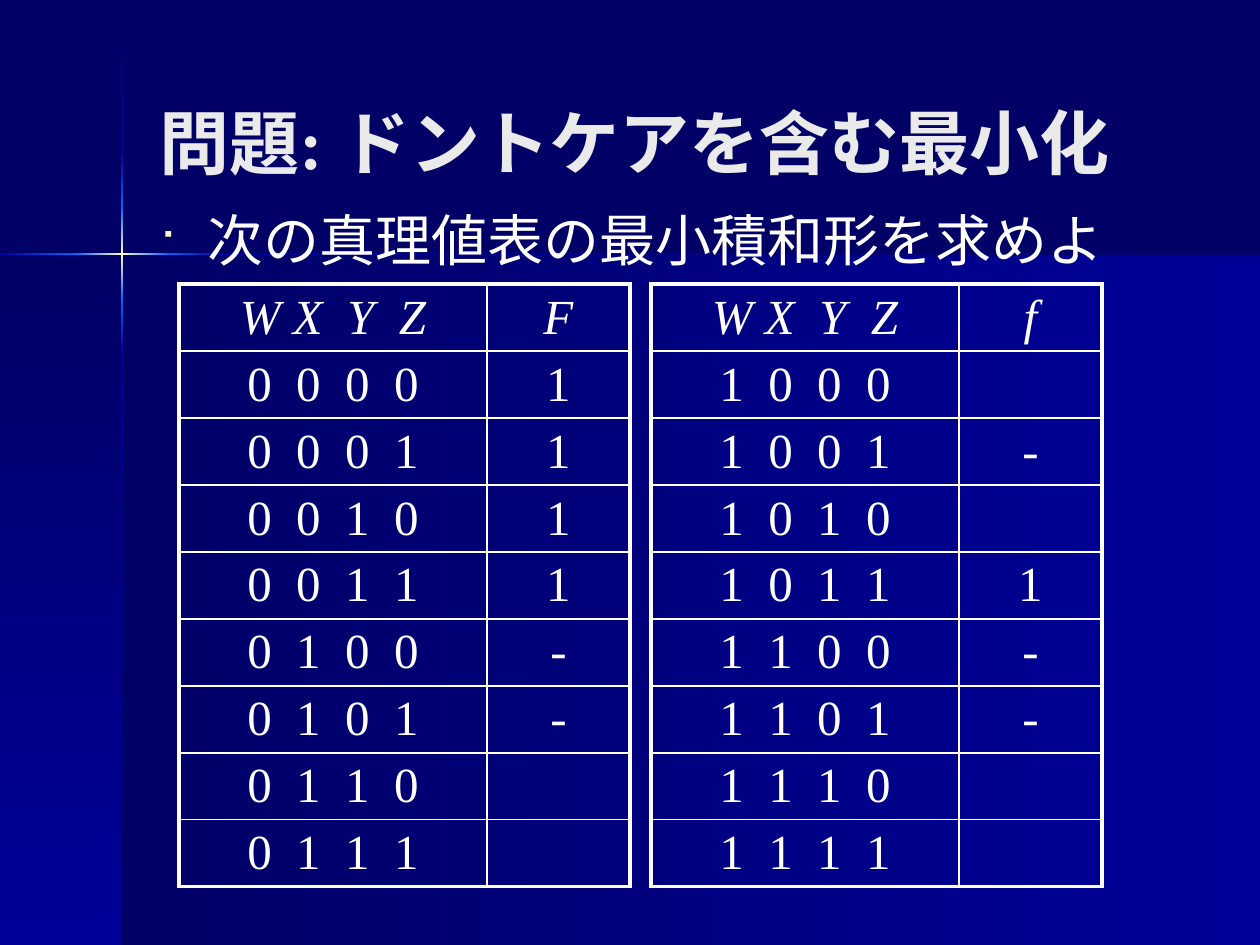
"""Build a slide with a don't-care minimisation exercise and its truth table."""
from lxml import etree
from pptx import Presentation
from pptx.dml.color import RGBColor
from pptx.enum.shapes import MSO_SHAPE
from pptx.enum.text import MSO_ANCHOR, PP_ALIGN
from pptx.oxml import parse_xml
from pptx.oxml.ns import nsdecls, qn
from pptx.util import Pt

RECTANGLE = MSO_SHAPE.RECTANGLE
MIDDLE = MSO_ANCHOR.MIDDLE
LEFT, CENTER = PP_ALIGN.LEFT, PP_ALIGN.CENTER

PX = 914400 // 126
FONT = "Times New Roman"
COLORS = {"night": "000066", "navy": "000099", "blue": "0066FF",
          "cream": "FFFFCC", "white": "FFFFFF", "title": "EAEAEA"}

TITLE = "問題: ドントケアを含む最小化"
TASK = "次の真理値表の最小積和形を求めよ"
INPUTS = "W X  Y  Z"
TRUTH_TABLES = [
    {"left": 179, "output": "F", "first": 0, "values": ["1", "1", "1", "1", "-", "-", "", ""]},
    {"left": 651, "output": "f", "first": 8, "values": ["", "-", "", "1", "-", "-", "", ""]},
]
TABLE_TOP, ROW_HEIGHT, COLUMN_WIDTHS = 284, 67, (308, 143)
THICK, THIN = 2.25, 1

DOWN, ACROSS = 90, 0
FADE_IN, FADE_OUT = ("night", "navy"), ("navy", "night")
GLOW_IN, GLOW_OUT = ("navy", "blue"), ("blue", "navy")
FLARE = ("blue", "cream", "blue")
BACKDROP = [
    ((122, 255, 1138, 690), FADE_IN, ACROSS),
    ((0, 255, 122, 690), FADE_IN, DOWN),
    ((121, 1, 2, 152), FADE_IN, DOWN),
    ((121, 355, 2, 590), FADE_OUT, DOWN),
    ((223, 253, 1037, 2), FADE_OUT, ACROSS),
    ((121, 300, 2, 55), GLOW_OUT, DOWN),
    ((121, 153, 2, 55), GLOW_IN, DOWN),
    ((121, 208, 2, 92), FLARE, DOWN),
    ((0, 253, 76, 2), GLOW_IN, ACROSS),
    ((168, 253, 55, 2), GLOW_OUT, ACROSS),
    ((76, 253, 92, 2), FLARE, ACROSS),
]


def px(*lengths):
    return [length * PX for length in lengths]


def style_font(paragraph, size, color, bold=False, italic=False):
    font = paragraph.font
    font.name, font.size, font.bold, font.italic = FONT, Pt(size), bold, italic
    font.color.rgb = RGBColor.from_string(COLORS[color])


def add_gradient_band(slide, box, stops, angle):
    band = slide.shapes.add_shape(RECTANGLE, *px(*box))
    band.shadow.inherit = False
    band.line.fill.background()
    stop_xml = "".join(
        f'<a:gs pos="{100000 * i // (len(stops) - 1)}"><a:srgbClr val="{COLORS[stop]}"/></a:gs>'
        for i, stop in enumerate(stops))
    gradient = parse_xml(f'<a:gradFill {nsdecls("a")}><a:gsLst>{stop_xml}</a:gsLst>'
                         f'<a:lin ang="{angle * 60000}" scaled="0"/></a:gradFill>')
    band._element.spPr.find(qn("a:prstGeom")).addnext(gradient)


def add_title(slide):
    title = slide.shapes.title
    title.left, title.top, title.width, title.height = px(147, 42, 1040, 198)
    title.text_frame.text = TITLE
    title.text_frame.vertical_anchor = MIDDLE
    heading = title.text_frame.paragraphs[0]
    heading.alignment = LEFT
    style_font(heading, 40, "title", bold=True)


def add_task(slide):
    frame = slide.shapes.add_textbox(*px(147, 199, 1040, 105)).text_frame
    frame.word_wrap = True
    frame.text = TASK
    task = frame.paragraphs[0]
    task.space_before = Pt(6.4)
    style_font(task, 32, "white")
    properties = task._p.get_or_add_pPr()
    properties.set("marL", str(48 * PX))
    properties.set("indent", str(-48 * PX))
    bullet_color = etree.SubElement(properties, qn("a:buClr"))
    etree.SubElement(bullet_color, qn("a:srgbClr"), val=COLORS["cream"])
    etree.SubElement(properties, qn("a:buSzPct"), val="70000")
    etree.SubElement(properties, qn("a:buFont"), typeface="Wingdings")
    etree.SubElement(properties, qn("a:buChar"), char="■")
    properties.append(properties.find(qn("a:defRPr")))


def set_borders(cell, outer_edges):
    for position, (edge, is_outer) in enumerate(outer_edges.items()):
        width = Pt(THICK if is_outer else THIN)
        cell._tc.get_or_add_tcPr().insert(position, parse_xml(
            f'<a:ln{edge} {nsdecls("a")} w="{width}"><a:solidFill>'
            f'<a:srgbClr val="{COLORS["white"]}"/></a:solidFill></a:ln{edge}>'))


def add_truth_table(slide, left, output, first, values):
    rows = [(INPUTS, output)]
    rows += [("  ".join(f"{first + i:04b}"), value) for i, value in enumerate(values)]
    table = slide.shapes.add_table(
        len(rows), len(COLUMN_WIDTHS),
        *px(left, TABLE_TOP, sum(COLUMN_WIDTHS), ROW_HEIGHT * len(rows))).table
    table.first_row = table.horz_banding = False
    for column, width in zip(table.columns, COLUMN_WIDTHS):
        column.width = width * PX
    for r, row in enumerate(rows):
        table.rows[r].height = ROW_HEIGHT * PX
        for c, text in enumerate(row):
            cell = table.cell(r, c)
            cell.text = text
            cell.vertical_anchor = MIDDLE
            cell.margin_top = cell.margin_bottom = 4 * PX
            cell.fill.background()
            set_borders(cell, {"L": c == 0, "R": c == len(row) - 1,
                               "T": r == 0, "B": r == len(rows) - 1})
            paragraph = cell.text_frame.paragraphs[0]
            paragraph.alignment = CENTER
            style_font(paragraph, 28, "white", italic=r == 0)


def main():
    presentation = Presentation()
    presentation.slide_width, presentation.slide_height = px(1260, 945)
    slide = presentation.slides.add_slide(presentation.slide_layouts[5])
    background = slide.background.fill
    background.solid()
    background.fore_color.rgb = RGBColor.from_string(COLORS["night"])
    for box, stops, angle in BACKDROP:
        add_gradient_band(slide, box, stops, angle)
    add_title(slide)
    add_task(slide)
    for truth_table in TRUTH_TABLES:
        add_truth_table(slide, **truth_table)
    presentation.save("out.pptx")


if __name__ == "__main__":
    main()
